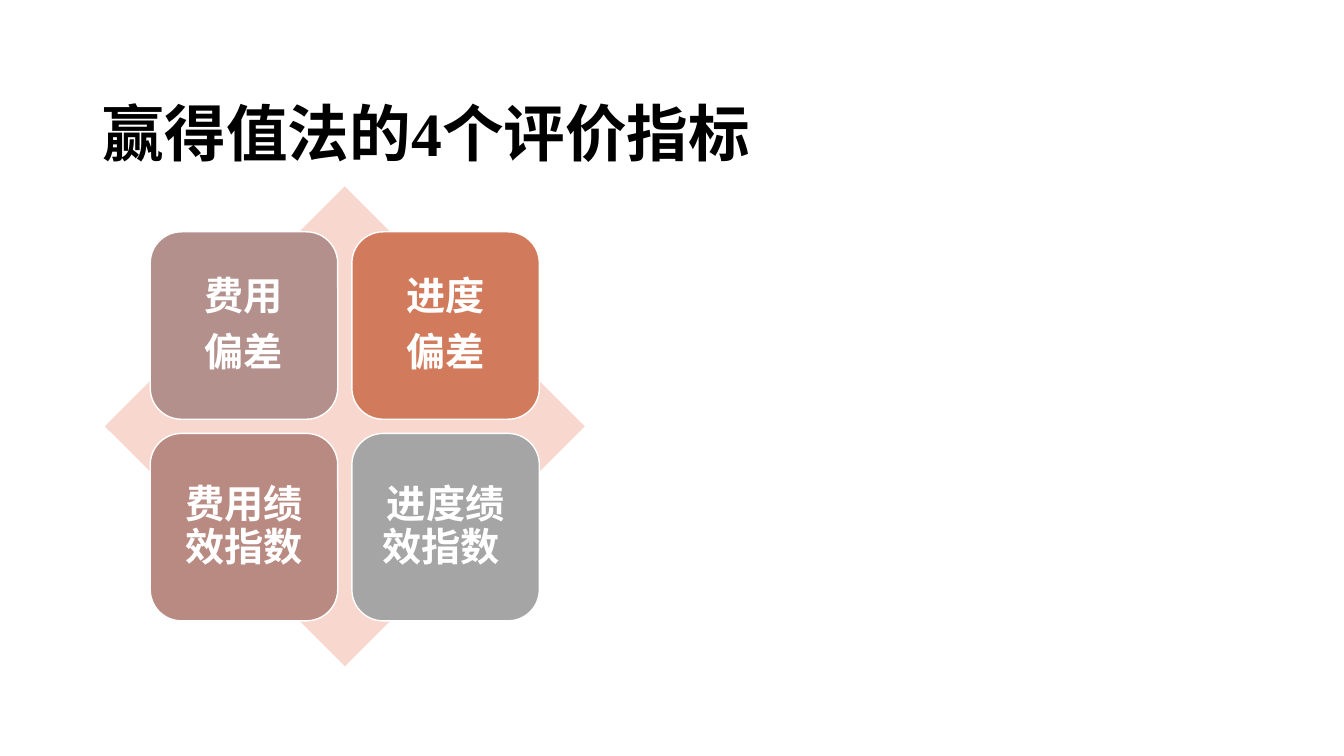
from pptx import Presentation
from pptx.dml.color import RGBColor as RGB
from pptx.enum.shapes import MSO_SHAPE as Preset
from pptx.enum.text import MSO_ANCHOR as Anchor, MSO_AUTO_SIZE as AutoSize, PP_ALIGN as Align
from pptx.util import Inches, Pt

THEME = {
    "font": "Times New Roman",
    "title": {"size": 44, "color": "000000"},
    "label": {"size": 28, "color": "FFFFFF"},
    "diamond": "F8D7CE",
    "outline": "FFFFFF",
}

# Matrix grid: diamond square, with the tiles centred in it
DIAMOND_LEFT, DIAMOND_TOP, DIAMOND_SIDE = 1.04, 1.85, 4.76
TILE, PITCH = 1.86, 2.0
TILE_MARGIN = (DIAMOND_SIDE - PITCH - TILE) / 2

INDICATORS = [
    [(["费用", "偏差"], "B3908C"), (["进度", "偏差"], "D17B5C")],
    [(["费用绩效指数"], "B98A82"), (["进度绩效指数 "], "A5A5A5")],
]


def write(frame, lines, style, frame_format, paragraph_format):
    for name, value in frame_format.items():
        setattr(frame, name, value)
    for index, line in enumerate(lines):
        paragraph = frame.add_paragraph() if index else frame.paragraphs[0]
        for name, value in paragraph_format.items():
            setattr(paragraph, name, value)
        run = paragraph.add_run()
        run.text = line
        font_format = {"name": THEME["font"], "size": Pt(style["size"]), "bold": True}
        for name, value in font_format.items():
            setattr(run.font, name, value)
        run.font.color.rgb = RGB.from_string(style["color"])


def add_panel(slide, preset, left, top, side, color):
    panel = slide.shapes.add_shape(preset, *map(Inches, (left, top, side, side)))
    panel.shadow.inherit = False
    panel.fill.solid()
    panel.fill.fore_color.rgb = RGB.from_string(color)
    panel.line.fill.background()
    return panel


deck = Presentation()
deck.slide_width, deck.slide_height = Inches(13.33), Inches(7.5)
slide = deck.slides.add_slide(deck.slide_layouts[5])

# Title
title = slide.shapes.title
title_box = {"left": 0.92, "top": 0.4, "width": 11.5, "height": 1.45}
for name, value in title_box.items():
    setattr(title, name, Inches(value))
write(title.text_frame, ["赢得值法的4个评价指标"], THEME["title"],
      {"vertical_anchor": Anchor.MIDDLE, "word_wrap": True, "auto_size": AutoSize.NONE},
      {"alignment": Align.LEFT, "line_spacing": 1.5})

# Diamond behind the matrix
add_panel(slide, Preset.DIAMOND, DIAMOND_LEFT, DIAMOND_TOP, DIAMOND_SIDE, THEME["diamond"])

# Four indicator tiles
label_frame = {"vertical_anchor": Anchor.MIDDLE, "word_wrap": True}
for side in ("left", "top", "right", "bottom"):
    label_frame[f"margin_{side}"] = Inches(0.12)
label_paragraph = {
    "alignment": Align.CENTER,
    "line_spacing": 0.9,
    "space_after": Pt(0.35 * THEME["label"]["size"]),
}
for row, indicators in enumerate(INDICATORS):
    for column, (lines, color) in enumerate(indicators):
        tile = add_panel(slide, Preset.ROUNDED_RECTANGLE,
                         DIAMOND_LEFT + TILE_MARGIN + column * PITCH,
                         DIAMOND_TOP + TILE_MARGIN + row * PITCH, TILE, color)
        tile.line.color.rgb = RGB.from_string(THEME["outline"])
        tile.line.width = Pt(1)
        write(tile.text_frame, lines, THEME["label"], label_frame, label_paragraph)

deck.save("out.pptx")
